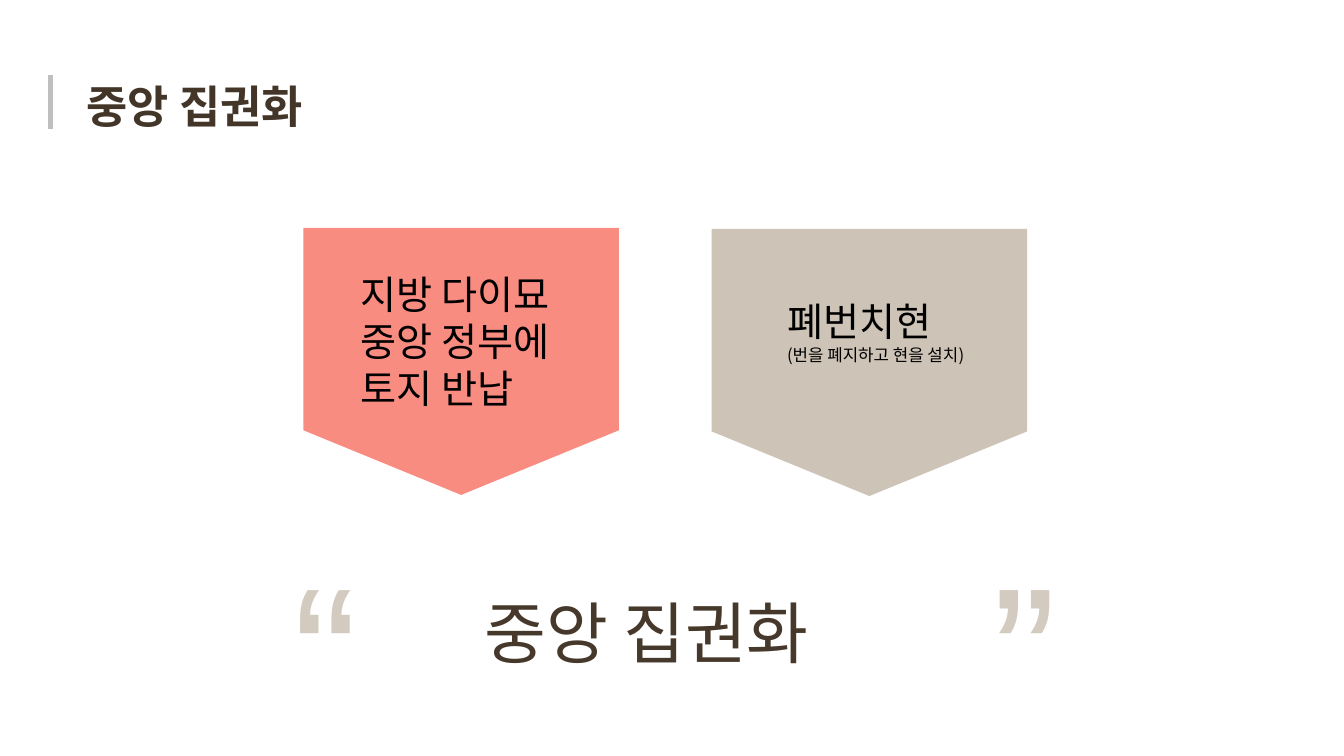
"""Builds the slide on centralisation of power with two pennants and a quoted conclusion."""
from lxml.etree import SubElement
from pptx import Presentation
from pptx.dml.color import RGBColor
from pptx.enum.shapes import MSO_CONNECTOR, MSO_SHAPE
from pptx.enum.text import MSO_AUTO_SIZE
from pptx.oxml.ns import qn
from pptx.util import Pt

COLORS = {
    "sand": "C5BAAB", "coral": "F8796C", "title": "433629", "rule": "BFBFBF",
    "black": "000000", "conclusion": "46382A", "quote": "D3CBBF",
}
KOREAN, LATIN = "Noto Sans CJK KR", "Arial"

PENNANT_SIZE = (190.8, 225.4)
PENNANTS = [(525.6, 146.2, "sand"), (234, 145.4, "coral")]
PENNANT_TIP, PENNANT_ALPHA = 0.242, 85000

RULE = (36, 53.3, 36, 92.2)

TEXTS = [
    ((54.7, 52.6, 455, 46.1), True, KOREAN, "title", True, [("중앙 집권화", 32)]),
    ((250.6, 189.4, 293.8, 108.7), True, KOREAN, "black", False,
     [("지방 다이묘", 28), ("중앙 정부에", 28), ("토지 반납", 28)]),
    ((555.1, 208.8, 244.1, 55.4), True, KOREAN, "black", False,
     [("폐번치현", 28), ("(번을 폐지하고 현을 설치)", 12)]),
    ((339.1, 419, 289.4, 65.5), False, KOREAN, "conclusion", False, [("중앙 집권화", 48)]),
    ((702, 375.1, 61.2, 174.2), False, LATIN, "quote", False, [("”", 138)]),
    ((202.3, 375.1, 61.2, 174.2), False, LATIN, "quote", False, [("“", 138)]),
]


def rgb(name):
    return RGBColor.from_string(COLORS[name])


def add_pennant(s, x, y, color):
    sp = s.shapes.add_shape(MSO_SHAPE.PENTAGON, *map(Pt, (x, y, *PENNANT_SIZE)))
    sp.rotation = 90
    sp.adjustments[0] = PENNANT_TIP
    sp.shadow.inherit = False
    sp.line.fill.background()
    sp.fill.solid()
    sp.fill.fore_color.rgb = rgb(color)
    fill = sp._element.spPr.find(qn("a:solidFill"))
    SubElement(fill[0], qn("a:alpha"), val=str(PENNANT_ALPHA))


def add_rule(s):
    line = s.shapes.add_connector(MSO_CONNECTOR.STRAIGHT, *map(Pt, RULE))
    line.line.color.rgb = rgb("rule")
    line.line.width = Pt(3)
    SubElement(line._element.spPr, qn("a:effectLst"))


def add_text(s, box, wrap, font, color, bold, lines):
    tf = s.shapes.add_textbox(*map(Pt, box)).text_frame
    tf.word_wrap = wrap
    tf.auto_size = MSO_AUTO_SIZE.SHAPE_TO_FIT_TEXT
    for i, (text, size) in enumerate(lines):
        p = tf.add_paragraph() if i else tf.paragraphs[0]
        r = p.add_run()
        r.text = text
        for key, value in {"name": font, "size": Pt(size), "bold": bold}.items():
            setattr(r.font, key, value)
        r.font.color.rgb = rgb(color)
        SubElement(r._r.get_or_add_rPr(), qn("a:ea"), typeface=font)


def main():
    prs = Presentation()
    prs.slide_width, prs.slide_height = Pt(960), Pt(540)
    s = prs.slides.add_slide(prs.slide_layouts[6])
    for pennant in PENNANTS:
        add_pennant(s, *pennant)
    add_rule(s)
    for text in TEXTS:
        add_text(s, *text)
    prs.save("out.pptx")


if __name__ == "__main__":
    main()
